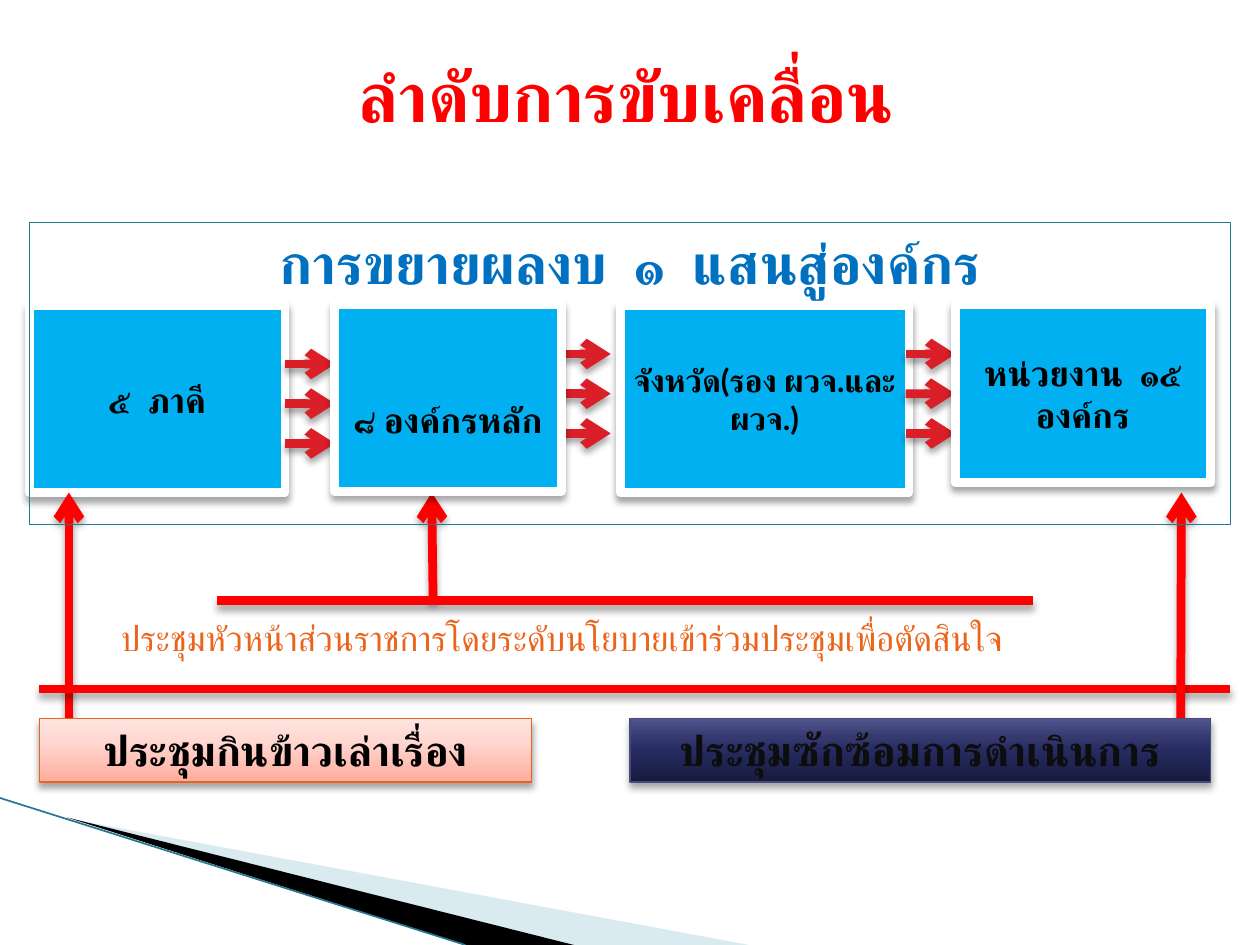
from lxml import etree
from pptx import Presentation
from pptx.dml.color import RGBColor
from pptx.enum.shapes import MSO_CONNECTOR, MSO_SHAPE
from pptx.enum.text import MSO_ANCHOR, PP_ALIGN
from pptx.oxml.ns import qn
from pptx.util import Pt

RECT = MSO_SHAPE.RECTANGLE
STRAIGHT = MSO_CONNECTOR.STRAIGHT
TOP, MIDDLE = MSO_ANCHOR.TOP, MSO_ANCHOR.MIDDLE
LEFT, CENTER = PP_ALIGN.LEFT, PP_ALIGN.CENTER

FONT = "Lato"
BLACK = RGBColor(0x00, 0x00, 0x00)
INK = RGBColor(0x0D, 0x0D, 0x0D)
WHITE = RGBColor(0xFF, 0xFF, 0xFF)
RED = RGBColor(0xFF, 0x00, 0x00)
CRIMSON = RGBColor(0xDA, 0x1F, 0x28)
CYAN = RGBColor(0x00, 0xB0, 0xF0)
BLUE = RGBColor(0x00, 0x70, 0xC0)
TEAL = RGBColor(0x22, 0x7A, 0x8F)
PALE = RGBColor(0xA0, 0xCB, 0xDC)
SKY = RGBColor(0x97, 0xC5, 0xD8)
ORANGE = RGBColor(0xEB, 0x64, 0x1B)
NAVY = RGBColor(0x47, 0x4B, 0x78)
PEACH = [(0, RGBColor(0xFF, 0xAC, 0x9C)), (65, RGBColor(0xFF, 0xD8, 0xD2)),
         (100, RGBColor(0xFF, 0xE4, 0xDF))]
DUSK = [(0, RGBColor(0x17, 0x1A, 0x3D)), (50, RGBColor(0x26, 0x2B, 0x61)),
        (70, RGBColor(0x35, 0x39, 0x70)), (100, RGBColor(0x51, 0x56, 0x8D))]


def add_node(parent, tag, **attrs):
    return etree.SubElement(parent, qn(tag), attrs)


def add_shade(effects):
    shade = add_node(effects, "a:outerShdw", blurRad=str(Pt(4)), dist=str(Pt(3)),
                     dir="5400000", rotWithShape="0")
    color = add_node(shade, "a:srgbClr", val=str(BLACK))
    add_node(color, "a:alpha", val="35000")


def add_text(shape, text, size, color, bold=True, align=CENTER, anchor=TOP):
    frame = shape.text_frame
    frame.word_wrap = True
    frame.vertical_anchor = anchor
    para = frame.paragraphs[0]
    para.alignment = align
    run = para.add_run()
    run.text = text
    font = run.font
    font.name, font.size, font.bold = FONT, Pt(size), bold
    font.color.rgb = color
    add_node(font._element, "a:cs", typeface=FONT)


def add_label(slide, area, *args, **style):
    box = slide.shapes.add_textbox(*map(Pt, area))
    add_text(box, *args, **style)


def add_rect(slide, area, edge, width):
    shape = slide.shapes.add_shape(RECT, *map(Pt, area))
    shape.shadow.inherit = False
    shape.line.color.rgb = edge
    shape.line.width = Pt(width)
    return shape


def add_card(slide, area, text, size):
    card = add_rect(slide, area, WHITE, 5)
    card.fill.solid()
    card.fill.fore_color.rgb = CYAN
    add_shade(card._element.spPr.find(qn("a:effectLst")))
    add_text(card, text, size, BLACK, anchor=MIDDLE)
    return card


def add_bar(slide, area, stops, edge, text, color):
    bar = add_rect(slide, area, edge, 0.75)
    bar.fill.gradient()
    bar.fill.gradient_angle = 90
    props = bar._element.spPr
    ramp = props.find(".//" + qn("a:gsLst"))
    for old in list(ramp):
        ramp.remove(old)
    for place, tone in stops:
        stop = add_node(ramp, "a:gs", pos=str(place * 1000))
        add_node(stop, "a:srgbClr", val=str(tone))
    add_shade(props.find(qn("a:effectLst")))
    add_text(bar, text, 24, color)


def add_line(slide, ends, color, width=5, head=False, shade=True):
    line = slide.shapes.add_connector(STRAIGHT, *map(Pt, ends))
    line.line.color.rgb = color
    line.line.width = Pt(width)
    if head:
        add_node(line.line._get_or_add_ln(), "a:tailEnd", type="arrow")
    effects = add_node(line._element.spPr, "a:effectLst")
    if shade:
        add_shade(effects)
    return line


def add_trio(slide, left, right, top):
    return [add_line(slide, (left, top + 22.7 * i, right, top + 22.7 * i), CRIMSON, head=True)
            for i in range(3)]


def add_wedge(slide, points, color, alpha=None):
    first, *rest = points
    maker = slide.shapes.build_freeform(*first, scale=Pt(1))
    maker.add_line_segments(rest, close=True)
    wedge = maker.convert_to_shape()
    wedge.shadow.inherit = False
    wedge.fill.solid()
    wedge.fill.fore_color.rgb = color
    wedge.line.fill.background()
    if alpha:
        tone = wedge._element.spPr.find(qn("a:solidFill"))[0]
        add_node(tone, "a:alpha", val=str(alpha * 1000))


def add_decor(slide):
    add_wedge(slide, [(39.6, 468.5), (428, 540), (328, 540)], PALE, 40)
    add_wedge(slide, [(38, 467.3), (328, 540), (266, 540)], BLACK)
    add_line(slide, (0, 456, 266, 540), TEAL, 0.95, shade=False)


def main():
    deck = Presentation()
    deck.slide_width, deck.slide_height = Pt(720), Pt(540)
    slide = deck.slides.add_slide(deck.slide_layouts[6])

    add_decor(slide)
    add_label(slide, (26.5, 20, 662.5, 68.5), "ลำดับการขับเคลื่อน", 40, RED, anchor=MIDDLE)

    add_card(slide, (16.8, 174.5, 146, 107), "๕  ภาคี", 20)
    add_card(slide, (354.4, 174.5, 165, 107), "จังหวัด(รอง ผวจ.และ ผวจ.)", 18)
    add_trio(slide, 163, 191.5, 208)
    add_trio(slide, 320.5, 349, 202.3)
    last = add_trio(slide, 517.5, 546, 202.3)

    add_line(slide, (39.4, 433.5, 39.4, 281.5), RED, head=True)
    add_line(slide, (22.5, 393.7, 703, 393.7), RED)
    add_line(slide, (674.6, 433.5, 675.1, 281.5), RED, head=True)
    add_label(slide, (62, 348.5, 630, 31.5),
              "ประชุมหัวหน้าส่วนราชการโดยระดับนโยบายเข้าร่วมประชุมเพื่อตัดสินใจ",
              20, ORANGE, bold=False, align=LEFT)
    add_line(slide, (247.5, 343.2, 246.7, 281.5), RED, head=True)
    add_line(slide, (124, 343.2, 590.5, 343.2), RED)

    frame = add_rect(slide, (16.8, 127.3, 686.2, 172.3), TEAL, 0.75)
    frame.fill.background()
    add_text(frame, "การขยายผลงบ  ๑  แสนสู่องค์กร", 32, BLUE)

    add_bar(slide, (22.5, 410.5, 281.3, 36.4), PEACH, ORANGE, "ประชุมกินข้าวเล่าเรื่อง", BLACK)
    add_bar(slide, (360, 410.5, 331.8, 36.4), DUSK, NAVY, "ประชุมซักซ้อมการดำเนินการ", INK)

    core = add_card(slide, (191.3, 174.2, 129.4, 106.6), "๘ องค์กรหลัก", 20)
    core.text_frame.margin_top = Pt(27.6)
    unit = add_card(slide, (545.8, 174.2, 146, 101.5), "หน่วยงาน  ๑๕ องค์กร", 20)
    last[1].end_connect(unit, 1)

    deck.save("out.pptx")


if __name__ == "__main__":
    main()
